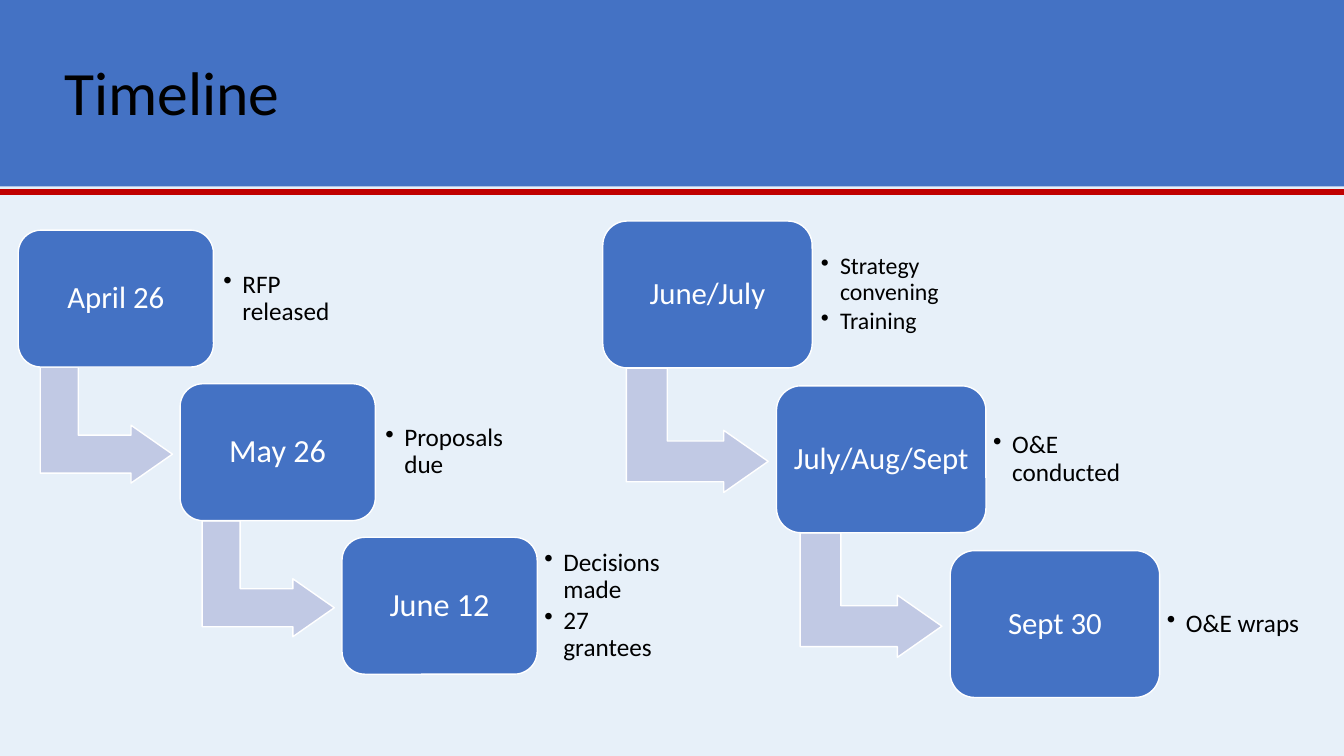
import pptx
import pptx.util
import pptx.dml.color
import pptx.enum.shapes
import pptx.enum.text
from lxml import etree

Cm, Pt = pptx.util.Cm, pptx.util.Pt
RGBColor = pptx.dml.color.RGBColor
KIND = pptx.enum.shapes.MSO_SHAPE
ALIGN = pptx.enum.text.PP_ALIGN
MIDDLE = pptx.enum.text.MSO_ANCHOR.MIDDLE

# Content: left, top, scale, then (date, date size, notes, note size, note inset)
TITLE = "Timeline"
FLOWS = [
    (0.46, 5.8, 1, [
        ("April 26", 22, ["RFP released"], 18, 0.25),
        ("May 26", 23, ["Proposals due"], 18, 0.25),
        ("June 12", 23, ["Decisions made", "27 grantees"], 18, 0.18),
    ]),
    (15.19, 5.57, 1.073, [
        ("June/July", 22, ["Strategy convening", "Training"], 17, 0.22),
        ("July/Aug/Sept", 22, ["O&E conducted"], 18, 0.18),
        ("Sept 30", 22, ["O&E wraps"], 18, 0.18),
    ]),
]

# Colours
PALE = RGBColor(0xE7, 0xF0, 0xF9)
BLUE = RGBColor(0x44, 0x72, 0xC4)
LILAC = RGBColor(0xC1, 0xC9, 0xE4)
RED = RGBColor(0xC0, 0x00, 0x00)
WHITE = RGBColor(0xFF, 0xFF, 0xFF)
BLACK = RGBColor(0x00, 0x00, 0x00)

# Sizes in cm at scale 1
WIDE, HIGH = 33.87, 19.05
BOX_W, BOX_H = 4.92, 3.45
STEP_X, STEP_Y = 4.08, 3.87
ARROW = (0.76, 3.25, 2.92, 3.33)
NOTE = (BOX_W, 0.33, 3.58, 2.79)
HANG = 0.48

deck = pptx.Presentation()
deck.slide_width, deck.slide_height = Cm(WIDE), Cm(HIGH)
slide = deck.slides.add_slide(deck.slide_layouts[6])
slide.background.fill.solid()
slide.background.fill.fore_color.rgb = PALE


def add_text(shape, lines, size, color=BLACK, align=ALIGN.LEFT,
             inset=0.25, bullet=False):
    frame = shape.text_frame
    frame.word_wrap = True
    frame.vertical_anchor = MIDDLE
    frame.margin_left = frame.margin_right = Cm(inset)
    frame.margin_top = frame.margin_bottom = Cm(inset)
    for i, line in enumerate(lines):
        para = frame.add_paragraph() if i else frame.paragraphs[0]
        para.text = line
        para.alignment = align
        para.line_spacing = 0.9
        if bullet:
            para.space_after = Pt(2.7)
            props = para._p.get_or_add_pPr()
            props.set("marL", str(Cm(HANG)))
            props.set("indent", str(-Cm(HANG)))
            mark = etree.SubElement(props, pptx.oxml.ns.qn("a:buChar"))
            mark.set("char", "•")
        para.font.name = "Calibri"
        para.font.size = Pt(size)
        para.font.color.rgb = color


def add_part(kind, place, fill, line=None):
    shape = slide.shapes.add_shape(kind, *map(Cm, place))
    shape.shadow.inherit = False
    shape.fill.solid()
    shape.fill.fore_color.rgb = fill
    if line is None:
        shape.line.fill.background()
    else:
        shape.line.color.rgb = line
        shape.line.width = Pt(1)
    return shape


def place_at(left, top, scale, part):
    x, y, w, h = (scale * v for v in part)
    return left + x, top + y, w, h


# Title band and red rule
add_part(KIND.RECTANGLE, (0, 0, WIDE, 4.7), BLUE)
title = slide.shapes.add_textbox(Cm(1.37), Cm(0.56), Cm(29.21), Cm(3.68))
add_text(title, [TITLE], 44)
rule = slide.shapes.add_connector(
    pptx.enum.shapes.MSO_CONNECTOR.STRAIGHT, 0, Cm(4.83), Cm(WIDE), Cm(4.83))
rule.line.color.rgb = RED
rule.line.width = Pt(4.5)
etree.SubElement(rule._element.spPr, pptx.oxml.ns.qn("a:effectLst"))

# Two stair-step flows
for left, top, scale, steps in FLOWS:
    for i, (date, size, notes, small, inset) in enumerate(steps):
        x = left + i * STEP_X * scale
        y = top + i * STEP_Y * scale
        if i < len(steps) - 1:
            arrow = add_part(KIND.BENT_UP_ARROW,
                             place_at(x, y, scale, ARROW), LILAC, WHITE)
            arrow.rotation = 90
            for j, value in enumerate((0.328, 0.25, 0.358)):
                arrow.adjustments[j] = value
        box = add_part(KIND.ROUNDED_RECTANGLE,
                       place_at(x, y, scale, (0, 0, BOX_W, BOX_H)),
                       BLUE, WHITE)
        add_text(box, [date], size, color=WHITE, align=ALIGN.CENTER,
                 inset=0.22)
        note = slide.shapes.add_textbox(
            *map(Cm, place_at(x, y, scale, NOTE)))
        add_text(note, notes, small, inset=inset, bullet=True)

deck.save("out.pptx")
